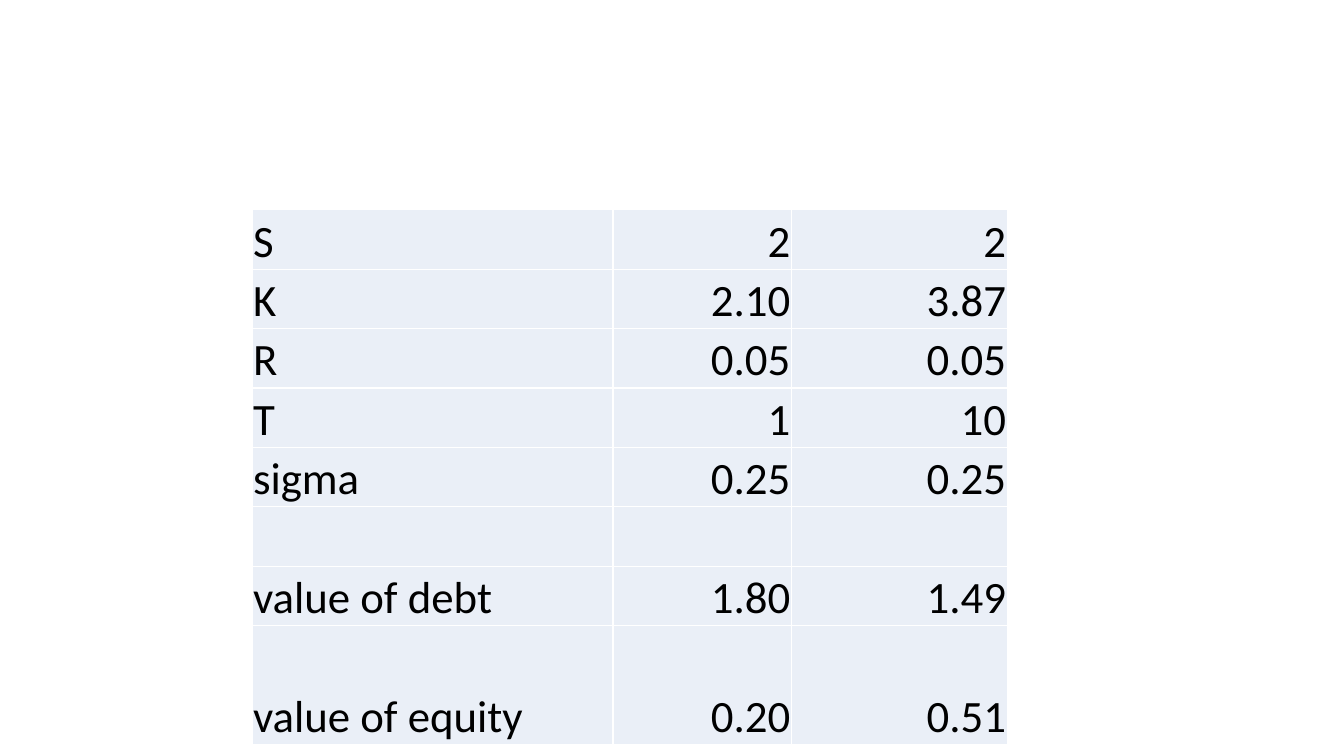
from lxml import etree
from pptx import Presentation
from pptx.dml.color import RGBColor
from pptx.enum.text import MSO_ANCHOR, PP_ALIGN
from pptx.oxml.ns import qn
from pptx.util import Inches, Pt

BOTTOM = MSO_ANCHOR.BOTTOM
LEFT, RIGHT = PP_ALIGN.LEFT, PP_ALIGN.RIGHT
BLANK_LAYOUT = 6

VALUATION = [
    ("S", "2", "2"),
    ("K", "2.10", "3.87"),
    ("R", "0.05", "0.05"),
    ("T", "1", "10"),
    ("sigma", "0.25", "0.25"),
    ("", "", ""),
    ("value of debt", "1.80", "1.49"),
    ("value of equity", "0.20", "0.51"),
]
COLUMN_WIDTHS = [3.58, 1.77, 2.14]
ROW_HEIGHTS = [0.59] * 7 + [1.18]


def rgb(hex_code):
    """Turn a hex string into a colour."""
    return RGBColor.from_string(hex_code)


class SlideBuilder:
    """Holds the style and the current slide."""

    font = "Calibri"
    size = 32
    ink = "000000"
    band = "EAEFF7"
    rule = "FFFFFF"
    inset = 0.01

    def __init__(self, slide):
        """Keep the slide to draw on."""
        self.slide = slide

    def table(self, left, top, widths, heights, rows):
        """Add a table with labels on the left and figures on the right."""
        frame = self.slide.shapes.add_table(
            len(rows), len(widths), Inches(left), Inches(top),
            Inches(sum(widths)), Inches(sum(heights)))
        grid = frame.table
        grid.first_row = grid.horz_banding = False
        for column, width in zip(grid.columns, widths):
            column.width = Inches(width)
        for row, height in zip(grid.rows, heights):
            row.height = Inches(height)
        for r, entries in enumerate(rows):
            for c, entry in enumerate(entries):
                self.cell(grid.cell(r, c), entry, RIGHT if c else LEFT)

    def cell(self, cell, entry, alignment):
        """Fill, border and write one table cell."""
        cell.fill.solid()
        cell.fill.fore_color.rgb = rgb(self.band)
        cell.vertical_anchor = BOTTOM
        cell.margin_left = cell.margin_right = cell.margin_top = Inches(self.inset)
        cell.margin_bottom = 0
        self.borders(cell)
        paragraph = cell.text_frame.paragraphs[0]
        paragraph.alignment = alignment
        if entry:
            run = paragraph.add_run()
            run.text = entry
            run.font.name = self.font
            run.font.size = Pt(self.size)
            run.font.color.rgb = rgb(self.ink)

    def borders(self, cell):
        """Draw a one-point rule on each side of a cell."""
        properties = cell._tc.get_or_add_tcPr()
        for position, side in enumerate(("lnL", "lnR", "lnT", "lnB")):
            line = etree.Element(qn(f"a:{side}"), w=str(Pt(1)))
            fill = etree.SubElement(line, qn("a:solidFill"))
            etree.SubElement(fill, qn("a:srgbClr"), val=self.rule)
            properties.insert(position, line)


def main():
    """Build and save the valuation slide."""
    deck = Presentation()
    deck.slide_width = Inches(13.33)
    deck.slide_height = Inches(7.5)
    builder = SlideBuilder(deck.slides.add_slide(deck.slide_layouts[BLANK_LAYOUT]))
    builder.table(2.5, 2.08, COLUMN_WIDTHS, ROW_HEIGHTS, VALUATION)
    deck.save("out.pptx")


if __name__ == "__main__":
    main()
